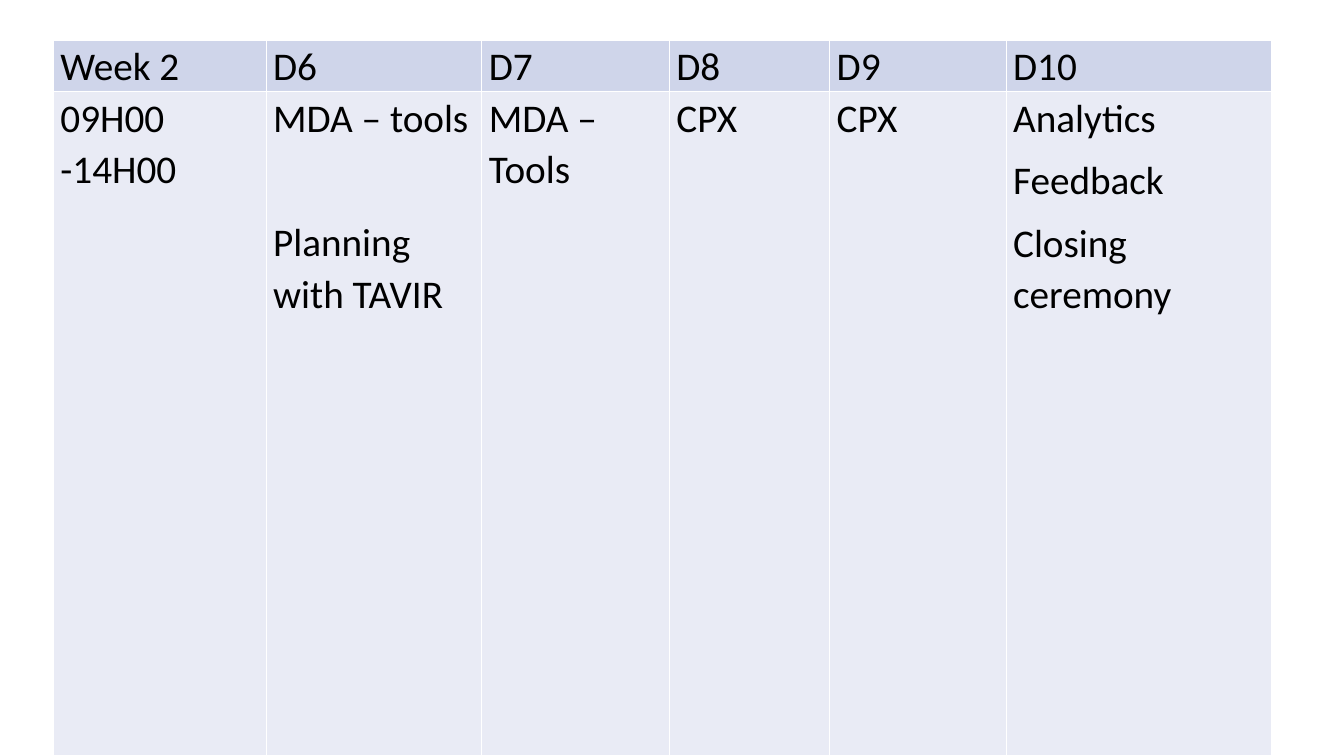
from lxml.etree import SubElement
from pptx import Presentation
from pptx.dml.color import RGBColor
from pptx.oxml import parse_xml
from pptx.oxml.ns import nsdecls
from pptx.util import Inches, Pt

DAY_WIDTHS = [2.11, 2.14, 1.86, 1.59, 1.75, 2.63]
HEADINGS = ["Week 2", "D6", "D7", "D8", "D9", "D10"]
SESSIONS = [
    ["09H00 -14H00"],
    ["MDA – tools", "Planning with TAVIR"],
    ["MDA – Tools"],
    ["CPX"],
    ["CPX"],
    ["Analytics", "Feedback", "Closing ceremony"],
]
HEADING_HEIGHT = 0.5
PLANNING_GAP = Pt(44.5)


def color(hex_value):
    return RGBColor.from_string(hex_value)


def add_borders(cell, hex_value, width):
    properties = cell._tc.get_or_add_tcPr()
    for position, side in enumerate(["lnL", "lnR", "lnT", "lnB"]):
        border = parse_xml(
            f'<a:{side} {nsdecls("a")} w="{width}"><a:solidFill>'
            f'<a:srgbClr val="{hex_value}"/></a:solidFill></a:{side}>'
        )
        properties.insert(position, border)


def fill_cell(cell, entries, background):
    cell.fill.solid()
    cell.fill.fore_color.rgb = color(background)
    cell.margin_left = cell.margin_right = Inches(0.07)
    cell.margin_top = cell.margin_bottom = 0
    add_borders(cell, "FFFFFF", Pt(1))
    frame = cell.text_frame
    for index, entry in enumerate(entries):
        paragraph = frame.paragraphs[0] if index == 0 else frame.add_paragraph()
        paragraph.line_spacing = 1.07
        paragraph.space_after = Pt(8)
        if entry.startswith("Planning"):
            paragraph.space_before = PLANNING_GAP
        run = paragraph.add_run()
        run.text = entry
        run.font.size = Pt(28)
        run.font.name = "Calibri"
        run.font.color.rgb = color("000000")


def add_schedule(slide, left, top, width, height):
    schedule = slide.shapes.add_table(
        2, len(HEADINGS), Inches(left), Inches(top), Inches(width), Inches(height)
    ).table
    schedule.first_row = False
    schedule.horz_banding = False
    schedule.rows[0].height = Inches(HEADING_HEIGHT)
    schedule.rows[1].height = Inches(height - HEADING_HEIGHT)
    for day, (heading, sessions) in enumerate(zip(HEADINGS, SESSIONS)):
        schedule.columns[day].width = Inches(width * DAY_WIDTHS[day] / sum(DAY_WIDTHS))
        fill_cell(schedule.cell(0, day), [heading], "CFD5EA")
        fill_cell(schedule.cell(1, day), sessions, "E9EBF5")


def main():
    presentation = Presentation()
    presentation.slide_width = Inches(13.33)
    presentation.slide_height = Inches(7.5)
    slide = presentation.slides.add_slide(presentation.slide_layouts[6])
    slide.background.fill.solid()
    slide.background.fill.fore_color.rgb = color("FFFFFF")
    add_schedule(slide, 0.53, 0.4, 12.08, 7.09)
    presentation.save("out.pptx")


if __name__ == "__main__":
    main()
